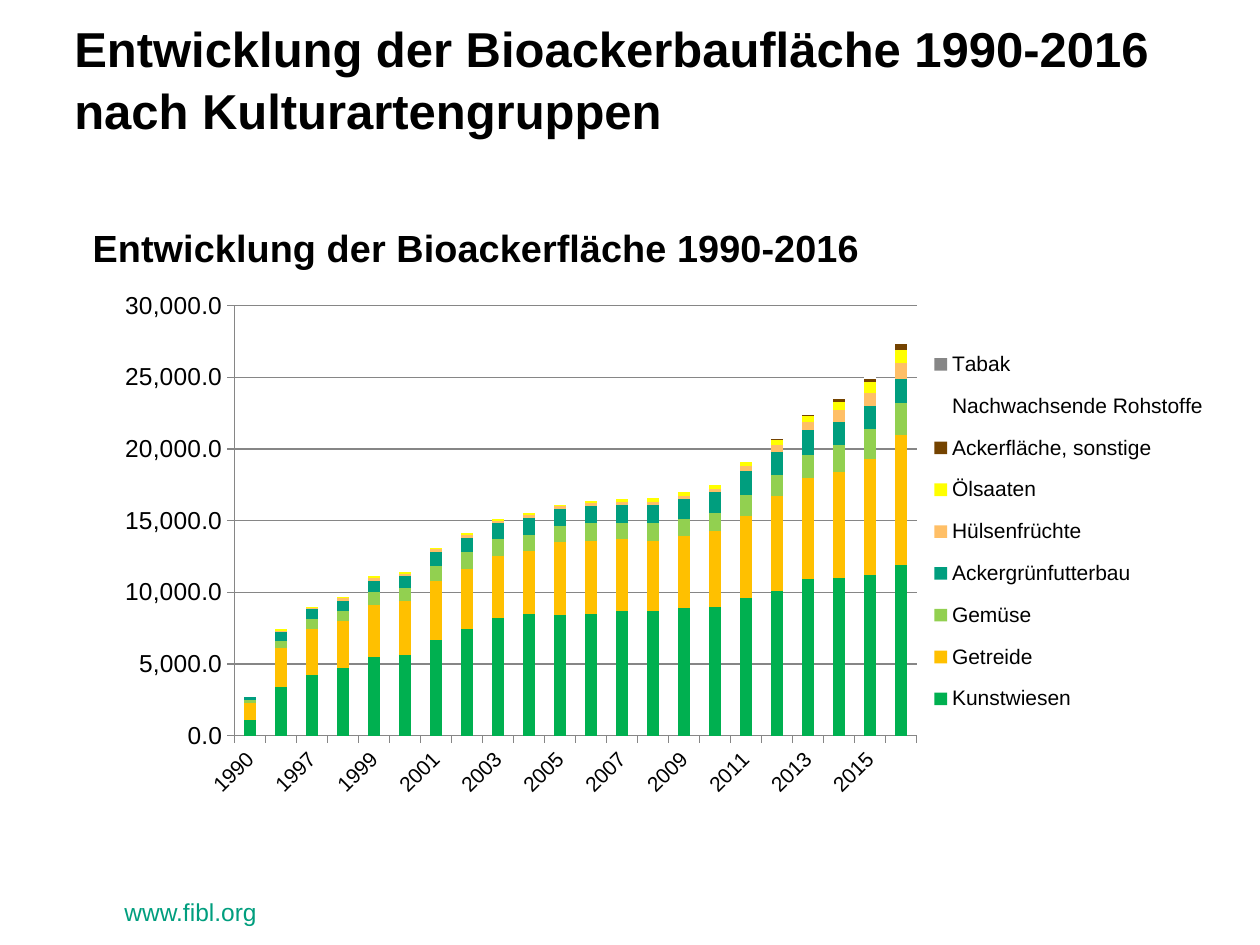
from lxml import etree
from pptx import Presentation
from pptx.chart.data import CategoryChartData
from pptx.dml.color import RGBColor
from pptx.enum.chart import XL_CHART_TYPE, XL_LEGEND_POSITION, XL_TICK_MARK
from pptx.enum.text import MSO_ANCHOR, MSO_AUTO_SIZE, PP_ALIGN
from pptx.oxml.ns import qn
from pptx.util import Pt

STACKED = XL_CHART_TYPE.COLUMN_STACKED
RIGHT = XL_LEGEND_POSITION.RIGHT
OUTSIDE, NO_TICK = XL_TICK_MARK.OUTSIDE, XL_TICK_MARK.NONE
MIDDLE, LEFT = MSO_ANCHOR.MIDDLE, PP_ALIGN.LEFT
NO_AUTOFIT, GROW = MSO_AUTO_SIZE.NONE, MSO_AUTO_SIZE.SHAPE_TO_FIT_TEXT

COLORS = {
    "text": "000000",
    "link": "009E7E",
    "axis": "868686",
    "Kunstwiesen": "00B050",
    "Getreide": "FFC000",
    "Gemüse": "92D050",
    "Ackergrünfutterbau": "009E7E",
    "Hülsenfrüchte": "FFBF66",
    "Ölsaaten": "FFFF00",
    "Ackerfläche, sonstige": "744300",
    "Nachwachsende Rohstoffe": "FFFFFF",
    "Tabak": "868686",
}
YEARS = [1990, *range(1996, 2017)]
AREAS = {
    "Kunstwiesen": [1100, 3400, 4200, 4700, 5500, 5600, 6700, 7400, 8200, 8500, 8400,
                    8500, 8700, 8700, 8900, 9000, 9600, 10100, 10900, 11000, 11200, 11900],
    "Getreide": [1200, 2700, 3200, 3300, 3600, 3800, 4100, 4200, 4300, 4400, 5100,
                 5100, 5000, 4900, 5000, 5300, 5700, 6600, 7100, 7400, 8100, 9100],
    "Gemüse": [200, 500, 700, 700, 900, 900, 1000, 1200, 1200, 1100, 1100,
               1200, 1100, 1200, 1200, 1200, 1500, 1500, 1600, 1900, 2100, 2200],
    "Ackergrünfutterbau": [200, 600, 700, 700, 800, 800, 1000, 1000, 1100, 1200, 1200,
                           1200, 1300, 1300, 1400, 1500, 1700, 1600, 1700, 1600, 1600, 1700],
    "Hülsenfrüchte": [0, 100, 100] + [200] * 13 + [300, 500, 600, 800, 900, 1100],
    "Ölsaaten": [0] + [100] * 10 + [200, 200] + [300] * 5 + [400, 600, 800, 900],
    "Ackerfläche, sonstige": [0] + [None] * 3 + [0] * 13 + [100, 100, 200, 200, 400],
    "Nachwachsende Rohstoffe": [None] + [0] * 17 + [100] * 4,
    "Tabak": [0] * 22,
}


def format_font(font, size, color="text", bold=False):
    for name, value in {"name": "Arial", "size": Pt(size), "bold": bold}.items():
        setattr(font, name, value)
    font.color.rgb = RGBColor.from_string(COLORS[color])


def place(element, index, values):
    for old_layout in element.findall(qn("c:layout")):
        element.remove(old_layout)
    layout = etree.Element(qn("c:layout"))
    manual = etree.SubElement(layout, qn("c:manualLayout"))
    for tag, value in values.items():
        etree.SubElement(manual, qn(f"c:{tag}")).set("val", str(value))
    element.insert(index, layout)


presentation = Presentation()
presentation.slide_width, presentation.slide_height = Pt(720), Pt(540)
slide = presentation.slides.add_slide(presentation.slide_layouts[5])

title = slide.shapes.title
title_format = {"left": Pt(42.5), "top": Pt(18), "width": Pt(649.5), "height": Pt(56)}
for name, value in title_format.items():
    setattr(title, name, value)
frame = title.text_frame
frame.text = "Entwicklung der Bioackerbaufläche 1990-2016 nach Kulturartengruppen"
frame_format = {
    "auto_size": NO_AUTOFIT, "word_wrap": True, "vertical_anchor": MIDDLE,
    "margin_left": 0, "margin_top": 0, "margin_right": Pt(7.2), "margin_bottom": Pt(3.6),
}
for name, value in frame_format.items():
    setattr(frame, name, value)
paragraph = frame.paragraphs[0]
paragraph.alignment = LEFT
paragraph.line_spacing = 1.05
format_font(paragraph.runs[0].font, 28, bold=True)

address = slide.shapes.add_textbox(Pt(64), Pt(509), Pt(91), Pt(24.5)).text_frame
address.text = "www.fibl.org"
address.word_wrap = False
address.auto_size = GROW
format_font(address.paragraphs[0].runs[0].font, 14, "link")

chart_data = CategoryChartData(number_format="0")
chart_data.categories = [str(year) for year in YEARS]
for group, values in AREAS.items():
    chart_data.add_series(group, values)
chart = slide.shapes.add_chart(
    STACKED, Pt(42.5), Pt(116.5), Pt(649.5), Pt(371), chart_data).chart
format_font(chart.font, 18)

chart.has_title = True
chart_title = chart.chart_title
chart_title.text_frame.text = "Entwicklung der Bioackerfläche 1990-2016"
format_font(chart_title.text_frame.paragraphs[0].runs[0].font, 21.6, bold=True)
place(chart_title._element, 1, {"xMode": "edge", "yMode": "edge", "x": 0.01, "y": 0.02})

plot = chart.plots[0]
plot.gap_width = 150
plot.overlap = 100
plot.vary_by_categories = False
for series in plot.series:
    series.format.fill.solid()
    series.format.fill.fore_color.rgb = RGBColor.from_string(COLORS[series.name])
place(chart._chartSpace.chart.plotArea, 0, {
    "layoutTarget": "inner", "xMode": "edge", "yMode": "edge",
    "x": 0.141, "y": 0.157, "w": 0.6, "h": 0.662})

category_axis, value_axis = chart.category_axis, chart.value_axis
for axis, size, number_format in ((category_axis, 12, "0"), (value_axis, 14, "#,##0.0")):
    axis.major_tick_mark = OUTSIDE
    axis.minor_tick_mark = NO_TICK
    format_font(axis.tick_labels.font, size)
    axis.tick_labels.number_format = number_format
    axis.tick_labels.number_format_is_linked = False
    axis.format.line.color.rgb = RGBColor.from_string(COLORS["axis"])
value_axis.minimum_scale = 0
value_axis.maximum_scale = 30000
value_axis.major_unit = 5000
value_axis.has_major_gridlines = True
value_axis.major_gridlines.format.line.color.rgb = RGBColor.from_string(COLORS["axis"])

axis_element = category_axis._element
axis_element.find(qn("c:txPr")).find(qn("a:bodyPr")).set("rot", "-2700000")
label_skip = etree.Element(qn("c:tickLblSkip"))
label_skip.set("val", "2")
axis_element.find(qn("c:noMultiLvlLbl")).addprevious(label_skip)

chart.has_legend = True
legend = chart.legend
legend.position = RIGHT
legend.include_in_layout = True
format_font(legend.font, 12)
place(legend._element, 1, {
    "xMode": "edge", "yMode": "edge", "x": 0.75, "y": 0.2, "w": 0.25, "h": 0.61})

presentation.save("out.pptx")
